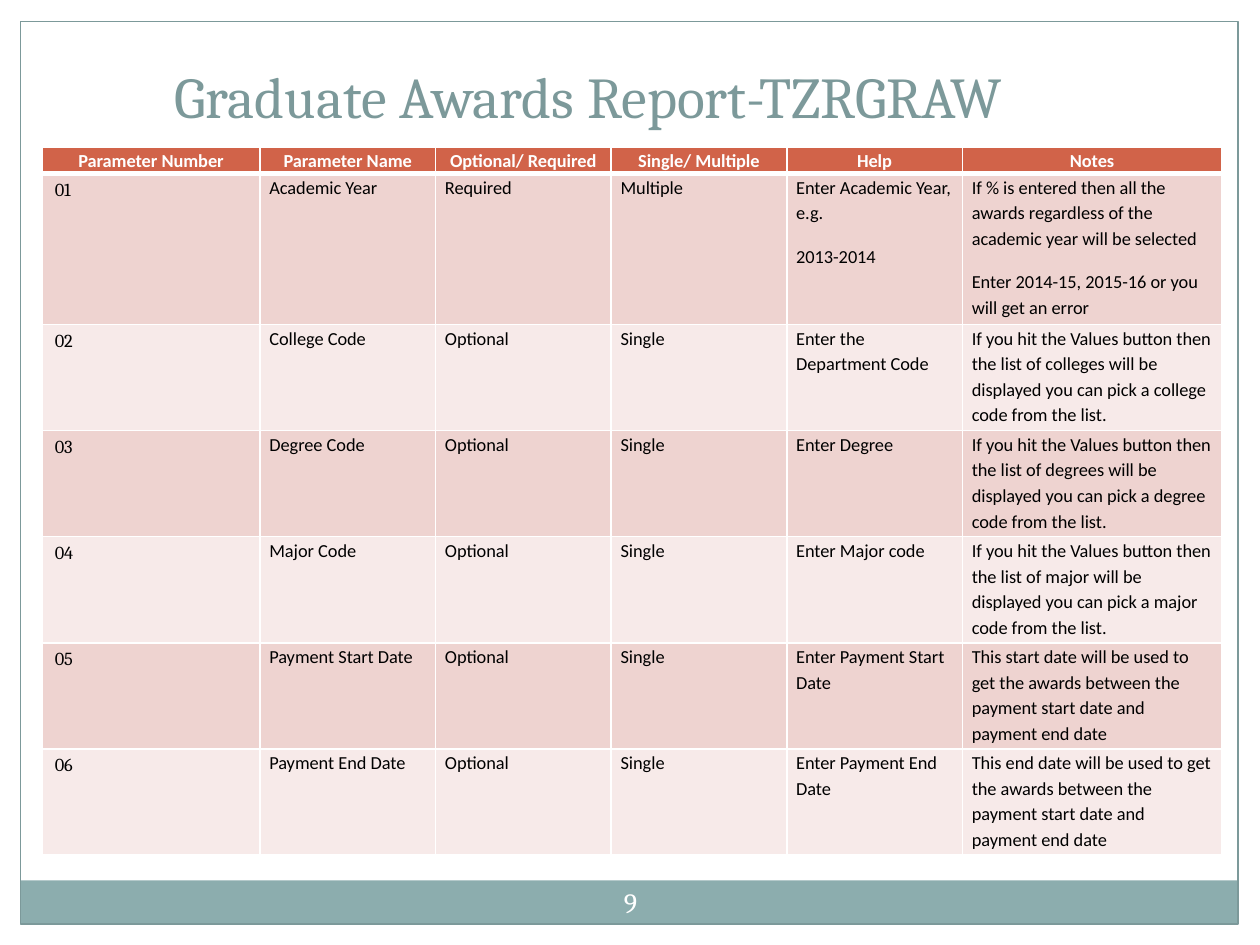
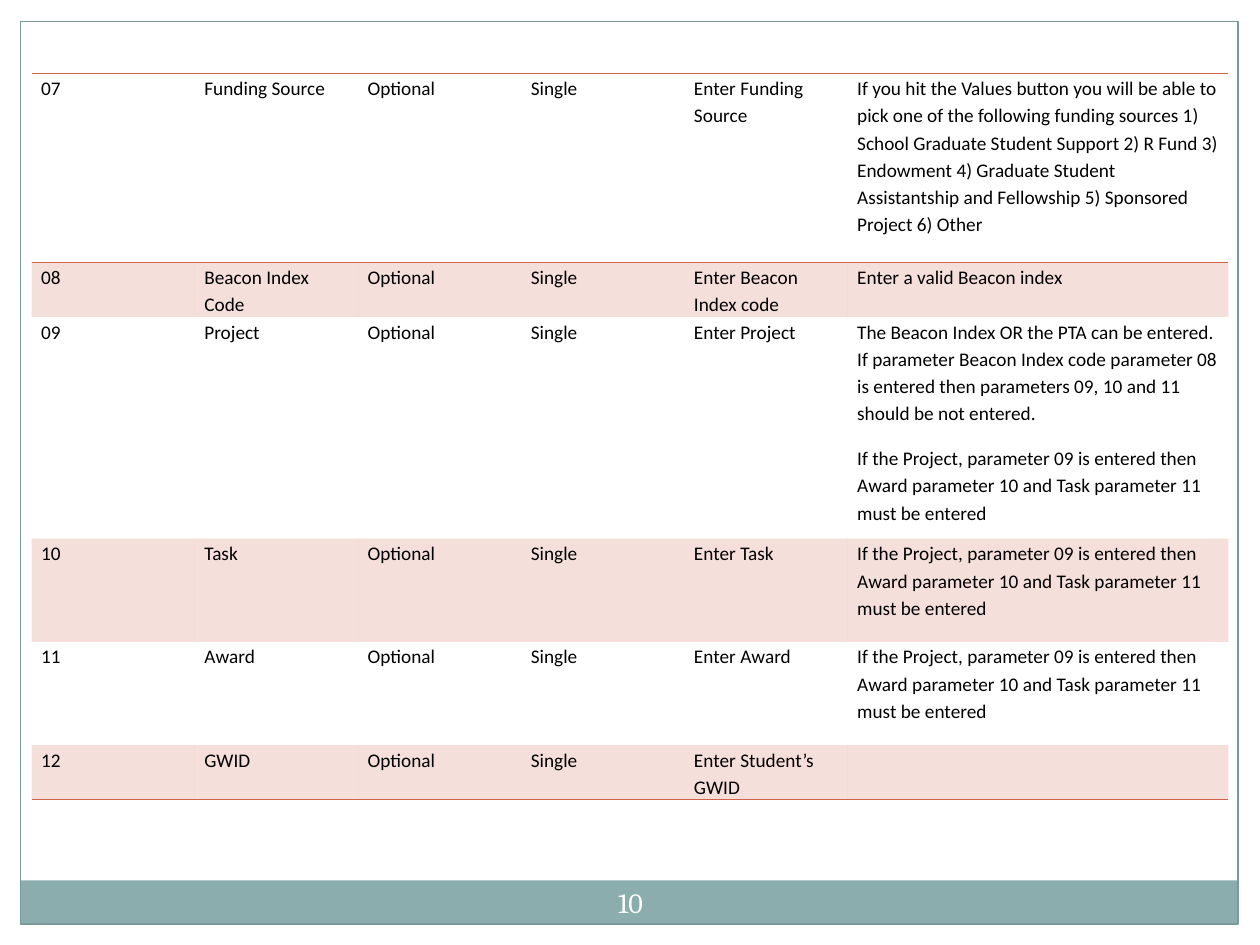
from lxml import etree
from pptx import Presentation
from pptx import util as u
from pptx.dml.color import RGBColor
from pptx.enum import shapes, text
from pptx.oxml import ns

COLORS = {
    "paper": "FFFFFF",
    "ink": "000000",
    "teal": "7C999A",
    "band": "8CADAE",
    "accent": "D16349",
    "rose": "EED3D0",
    "blush": "F7EAE9",
}
NO_GRID_STYLE = "{2D5ABB26-0587-4C30-8999-92F81FD0307C}"
EDGES = {"left": "a:lnL", "right": "a:lnR", "top": "a:lnT", "bottom": "a:lnB"}
PAGE_MARGINS = [(0, 0, 25.4, 0.43), (24.97, 0, 0.43, 19.05), (0, 0, 0.43, 19.05)]

FLAT_MARGINS = {"margin_left": u.Cm(0.19), "margin_right": u.Cm(0.19),
                "margin_top": 0, "margin_bottom": 0}
NUMBER_MARGINS = dict.fromkeys(
    ("margin_left", "margin_right", "margin_top", "margin_bottom"), u.Cm(0.13))
CENTERED = {"alignment": text.PP_ALIGN.CENTER}
SPACED = {"line_spacing": 1.15, "space_after": u.Pt(10)}
TITLE_FONT = {"name": "Cambria", "size": u.Pt(33)}
PAGE_FONT = {"name": "Cambria", "size": u.Pt(16)}

HEADINGS = ["Parameter Number", "Parameter Name", "Optional/ Required",
            "Single/ Multiple", "Help", "Notes"]
TASK_RULE = ("If the Project, parameter 09 is entered then Award parameter 10 "
             "and Task parameter 11 must be entered")


def values_note(listed, picked):
    return (f"If you hit the Values button then the list of {listed} will be displayed "
            f"you can pick a {picked} code from the list.")


def date_note(edge):
    return (f"This {edge} date will be used to get the awards between the "
            "payment start date and payment end date")


def optional_rows(first_number, entries):
    return [[f"{number:02d}", name, "Optional", "Single", hint, note]
            for number, (name, hint, note) in enumerate(entries, first_number)]


FIRST_PARAMETERS = [
    ["01", "Academic Year", "Required", "Multiple",
     "Enter Academic Year, e.g.\n2013-2014",
     "If % is entered then all the awards regardless of the academic year will be selected\n"
     "Enter 2014-15, 2015-16 or you will get an error"],
    *optional_rows(2, [
        ("College Code", "Enter the Department Code", values_note("colleges", "college")),
        ("Degree Code", "Enter Degree", values_note("degrees", "degree")),
        ("Major Code", "Enter Major code", values_note("major", "major")),
        ("Payment Start Date", "Enter Payment Start Date", date_note("start")),
        ("Payment End Date", "Enter Payment End Date", date_note("end")),
    ]),
]
LAST_PARAMETERS = optional_rows(7, [
    ("Funding Source", "Enter Funding Source",
     "If you hit the Values button you will be able to pick one of the following funding "
     "sources 1) School Graduate Student Support 2) R Fund 3) Endowment 4) Graduate Student "
     "Assistantship and Fellowship 5) Sponsored Project 6) Other"),
    ("Beacon Index Code", "Enter Beacon Index code", "Enter a valid Beacon index"),
    ("Project", "Enter Project",
     "The Beacon Index OR the PTA can be entered. If parameter Beacon Index code parameter 08 "
     "is entered then parameters 09, 10 and 11 should be not entered.\n" + TASK_RULE),
    ("Task", "Enter Task", TASK_RULE),
    ("Award", "Enter Award", TASK_RULE),
    ("GWID", "Enter Student’s GWID", ""),
])


def rgb(color):
    return RGBColor.from_string(COLORS[color])


def cm_box(*lengths):
    return [u.Cm(length) for length in lengths]


def apply(target, values):
    for attribute, value in values.items():
        setattr(target, attribute, value)


def write(frame, content, font, color, paragraph_format):
    for index, line in enumerate(content.split("\n")):
        paragraph = frame.add_paragraph() if index else frame.paragraphs[0]
        apply(paragraph, paragraph_format)
        if line:
            run = paragraph.add_run()
            run.text = line
            apply(run.font, font)
            run.font.color.rgb = rgb(color)


def add_rectangle(slide, box, fill=None, line=None):
    rectangle = slide.shapes.add_shape(shapes.MSO_SHAPE.RECTANGLE, *cm_box(*box))
    rectangle.shadow.inherit = False
    if fill:
        rectangle.fill.solid()
        rectangle.fill.fore_color.rgb = rgb(fill)
    else:
        rectangle.fill.background()
    if line:
        rectangle.line.color.rgb = rgb(line)
        rectangle.line.width = u.Pt(0.75)
    else:
        rectangle.line.fill.background()


def add_page(deck, layout_index):
    slide = deck.slides.add_slide(deck.slide_layouts[layout_index])
    for margin in PAGE_MARGINS:
        add_rectangle(slide, margin, fill="paper")
    add_rectangle(slide, (0.42, 17.75, 24.54, 0.87), fill="band")
    add_rectangle(slide, (0.42, 0.43, 24.54, 18.2), line="teal")
    return slide


def add_page_number(slide, number):
    frame = slide.shapes.add_textbox(*cm_box(11.86, 17.58, 1.7, 1.22)).text_frame
    apply(frame, {"word_wrap": True, "vertical_anchor": text.MSO_ANCHOR.MIDDLE,
                  **NUMBER_MARGINS})
    write(frame, str(number), PAGE_FONT, "paper", CENTERED)


def set_title(slide, heading):
    title = slide.shapes.title
    apply(title, dict(zip(("left", "top", "width", "height"),
                          cm_box(0, 0.64, 23.71, 2.11))))
    apply(title.text_frame, {"vertical_anchor": text.MSO_ANCHOR.BOTTOM,
                             "auto_size": text.MSO_AUTO_SIZE.NONE})
    write(title.text_frame, heading, TITLE_FONT, "teal", CENTERED)


def add_grid(slide, left, top, widths, heights):
    frame = slide.shapes.add_table(len(heights), len(widths),
                                   *cm_box(left, top, sum(widths), sum(heights)))
    grid = frame.table
    apply(grid, {"first_row": False, "horz_banding": False})
    grid._tbl.tblPr.find(ns.qn("a:tableStyleId")).text = NO_GRID_STYLE
    for column, width in zip(grid.columns, widths):
        column.width = u.Cm(width)
    for row, height in zip(grid.rows, heights):
        row.height = u.Cm(height)
    return grid


def set_borders(cell, color, points):
    properties = cell._tc.get_or_add_tcPr()
    for edge, tag in EDGES.items():
        if edge in points:
            line = etree.SubElement(properties, ns.qn(tag), w=str(u.Pt(points[edge])))
            fill = etree.SubElement(line, ns.qn("a:solidFill"))
            etree.SubElement(fill, ns.qn("a:srgbClr"), val=COLORS[color])


def set_fill(cell, color, opacity=100):
    cell.fill.solid()
    cell.fill.fore_color.rgb = rgb(color)
    if opacity < 100:
        tint = cell._tc.tcPr.find(ns.qn("a:solidFill")).find(ns.qn("a:srgbClr"))
        etree.SubElement(tint, ns.qn("a:alpha"), val=str(opacity * 1000))


def fill_first_grid(grid):
    for r, entries in enumerate([HEADINGS, *FIRST_PARAMETERS]):
        is_header = r == 0
        borders = dict.fromkeys(EDGES, 1)
        if r < 2:
            borders["bottom" if is_header else "top"] = 3
        for c, entry in enumerate(entries):
            cell = grid.cell(r, c)
            is_number = c == 0 and not is_header
            set_borders(cell, "paper", borders)
            set_fill(cell, "accent" if is_header else "rose" if r % 2 else "blush")
            if not is_number:
                apply(cell, FLAT_MARGINS)
            font = {"name": "Cambria" if is_number else "Calibri",
                    "size": u.Pt(10.5), "bold": is_header}
            layout = {} if is_number else {**SPACED, **(CENTERED if is_header else {})}
            write(cell.text_frame, entry, font, "paper" if is_header else "ink", layout)


def fill_last_grid(grid):
    font = {"name": "Calibri", "size": u.Pt(11)}
    borders = {0: {"top": 1, "bottom": 1}, len(LAST_PARAMETERS) - 1: {"bottom": 1}}
    for r, entries in enumerate(LAST_PARAMETERS):
        for c, entry in enumerate(entries):
            cell = grid.cell(r, c)
            set_borders(cell, "accent", borders.get(r, {}))
            if r % 2:
                set_fill(cell, "accent", opacity=20)
            else:
                cell.fill.background()
            apply(cell, FLAT_MARGINS)
            write(cell.text_frame, entry, font, "ink", SPACED)


def main():
    deck = Presentation()
    apply(deck, {"slide_width": u.Cm(25.4), "slide_height": u.Cm(19.05)})

    report = add_page(deck, 5)
    set_title(report, "Graduate Awards Report-TZRGRAW")
    fill_first_grid(add_grid(report, 0.85, 2.96, [4.39] + [3.54] * 4 + [5.23],
                             [0.54, 3.04] + [2.14] * 5))
    add_page_number(report, 9)

    continuation = add_page(deck, 6)
    fill_last_grid(add_grid(continuation, 0.64, 1.48, [3.29] * 5 + [7.67],
                            [3.81, 1.1, 4.47, 2.08, 2.08, 1.1]))
    add_page_number(continuation, 10)

    deck.save("out.pptx")


if __name__ == "__main__":
    main()
